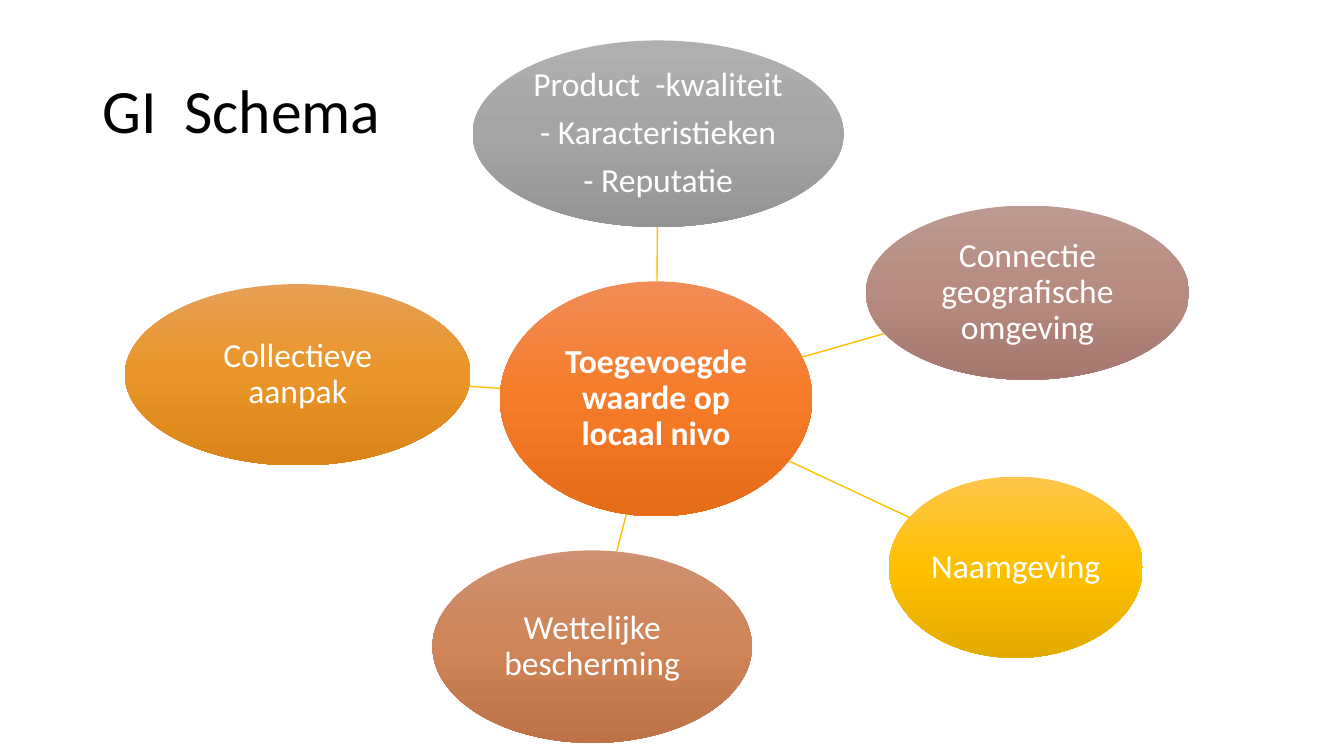
from copy import deepcopy
from math import hypot

from lxml.etree import SubElement
from pptx import Presentation
from pptx.dml.color import RGBColor
from pptx.enum.shapes import MSO_CONNECTOR, MSO_SHAPE
from pptx.enum.text import MSO_ANCHOR, PP_ALIGN
from pptx.oxml.ns import qn
from pptx.util import Cm, Pt

COLOURS = {"title": "000000", "label": "FFFFFF", "spoke": "FFC000"}

# Gradient stops from top to bottom
GRADIENTS = {
    "orange": ("F18C57", "F67B28", "E56C19"),
    "grey": ("AFAFAF", "A5A5A5", "939393"),
    "mauve": ("BD9A91", "B78B80", "A5776F"),
    "copper": ("CF9172", "CE8456", "BD7247"),
    "amber": ("E6A056", "EA9527", "DA8319"),
    "yellow": ("FFC64B", "FFC000", "E3AB00"),
}

# Ellipses as (left, top, width, height) in cm, gradient, paragraphs
HUB = ((12.6, 7.09, 7.87, 5.92), "orange", ["Toegevoegde waarde op locaal nivo"])
SATELLITES = [
    ((11.91, 1.02, 9.35, 4.7), "grey",
     ["Product  -kwaliteit", "- Karacteristieken", "- Reputatie"]),
    ((21.82, 5.18, 8.15, 4.39), "mauve", ["Connectie geografische omgeving"]),
    ((10.9, 13.87, 8.05, 4.85), "copper", ["Wettelijke bescherming"]),
    ((3.15, 7.16, 8.71, 4.57), "amber", ["Collectieve aanpak"]),
    ((22.4, 12.01, 6.4, 4.57), "yellow", ["Naamgeving"]),
]


def apply_format(target, **values):
    for name, value in values.items():
        setattr(target, name, value)


def edge_point(area, toward):
    """Point where the line from the ellipse centre to the other centre leaves it."""
    left, top, width, height = area
    x, y = left + width / 2, top + height / 2
    dx = toward[0] + toward[2] / 2 - x
    dy = toward[1] + toward[3] / 2 - y
    share = 1 / hypot(dx / (width / 2), dy / (height / 2))
    return Cm(x + share * dx), Cm(y + share * dy)


class Diagram:
    font_name = "Calibri"
    title_size = Pt(44)
    label_size = Pt(24)
    line_spacing = 0.9
    paragraph_gap = Pt(8.5)
    inset = Cm(0.05)

    def __init__(self, page):
        self.page = page

    def add_span(self, paragraph, text, size, colour, bold=False):
        paragraph.line_spacing = self.line_spacing
        span = paragraph.add_run()
        span.text = text
        apply_format(span.font, name=self.font_name, size=size, bold=bold)
        span.font.color.rgb = RGBColor.from_string(COLOURS[colour])

    def title(self, text, area):
        box = self.page.shapes.title
        left, top, width, height = map(Cm, area)
        apply_format(box, left=left, top=top, width=width, height=height)
        box.text_frame.vertical_anchor = MSO_ANCHOR.MIDDLE
        paragraph = box.text_frame.paragraphs[0]
        paragraph.alignment = PP_ALIGN.LEFT
        self.add_span(paragraph, text, self.title_size, "title")

    def ellipse(self, area, gradient, texts, bold=False):
        shape = self.page.shapes.add_shape(MSO_SHAPE.OVAL, *map(Cm, area))
        shape.shadow.inherit = False
        shape.line.fill.background()
        self.shade(shape, GRADIENTS[gradient])
        frame = shape.text_frame
        apply_format(frame, word_wrap=True, vertical_anchor=MSO_ANCHOR.MIDDLE,
                     margin_left=self.inset, margin_right=self.inset,
                     margin_top=self.inset, margin_bottom=self.inset)
        for index, text in enumerate(texts):
            paragraph = frame.add_paragraph() if index else frame.paragraphs[0]
            paragraph.alignment = PP_ALIGN.CENTER
            if index:
                paragraph.space_before = self.paragraph_gap
            self.add_span(paragraph, text, self.label_size, "label", bold)

    def shade(self, shape, colours):
        shape.fill.gradient()
        shape.fill.gradient_angle = 270
        # A new gradient has two stops; add the third
        stop_list = shape.element.spPr.find(qn("a:gradFill")).find(qn("a:gsLst"))
        stop_list.append(deepcopy(stop_list[-1]))
        for index, (stop, colour) in enumerate(zip(shape.fill.gradient_stops, colours)):
            stop.position = index / 2
            stop.color.rgb = RGBColor.from_string(colour)

    def spoke(self, hub_area, area):
        line = self.page.shapes.add_connector(
            MSO_CONNECTOR.STRAIGHT,
            *edge_point(hub_area, area), *edge_point(area, hub_area))
        line.line.width = Pt(1)
        line.line.color.rgb = RGBColor.from_string(COLOURS["spoke"])
        SubElement(line.element.spPr, qn("a:effectLst"))


def main():
    deck = Presentation()
    deck.slide_width, deck.slide_height = Cm(33.87), Cm(19.05)
    diagram = Diagram(deck.slides.add_slide(deck.slide_layouts[5]))

    # Title
    diagram.title("GI  Schema", (2.33, 1.01, 29.21, 3.68))

    # Hub with its satellites
    diagram.ellipse(*HUB, bold=True)
    for satellite in SATELLITES:
        diagram.spoke(HUB[0], satellite[0])
        diagram.ellipse(*satellite)

    deck.save("out.pptx")


if __name__ == "__main__":
    main()
